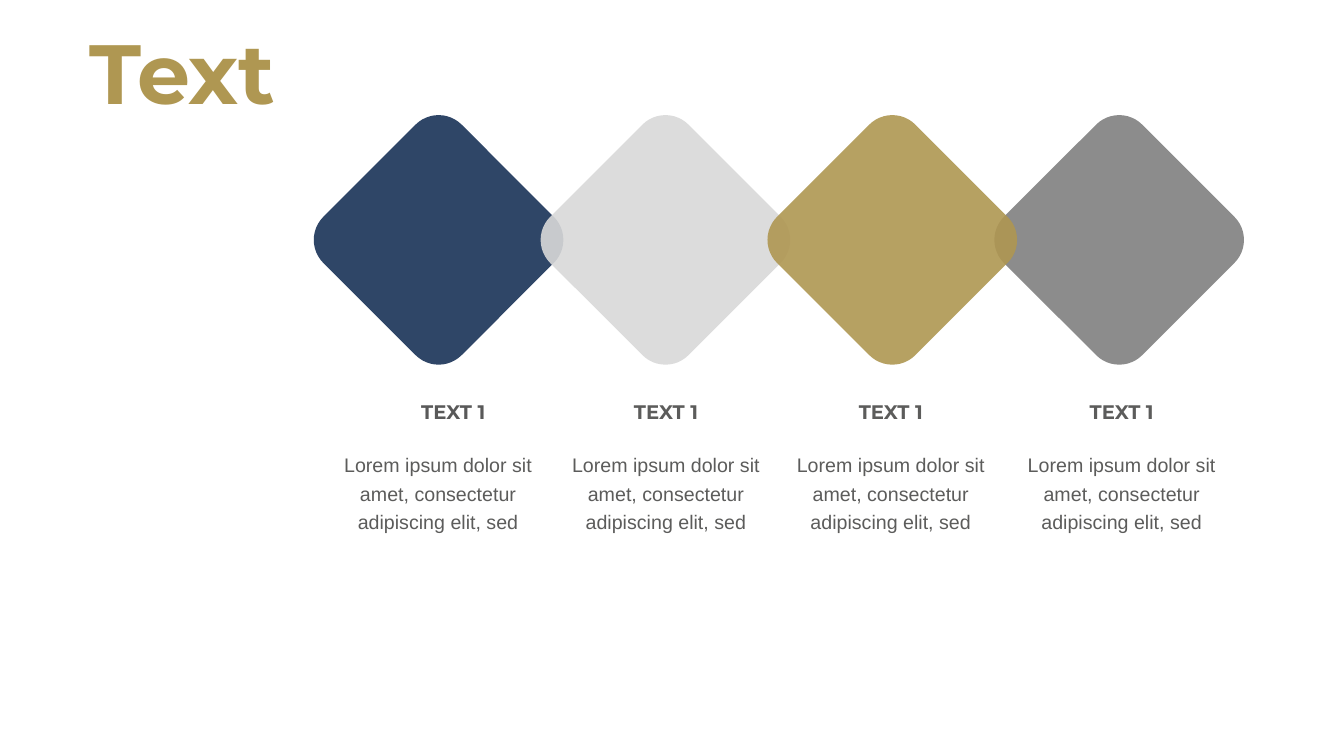
from dataclasses import dataclass

from lxml.etree import SubElement
from pptx import Presentation
from pptx.dml.color import RGBColor
from pptx.enum.shapes import MSO_SHAPE
from pptx.enum.text import MSO_ANCHOR, MSO_AUTO_SIZE, PP_ALIGN
from pptx.oxml.ns import qn
from pptx.shapes.autoshape import Shape
from pptx.slide import Slide
from pptx.util import Inches, Pt

COLOURS = {
    "navy": "193257",
    "silver": "D9D9D9",
    "gold": "AF9752",
    "grey": "808080",
    "first_heading": "595959",
    "text": "5C5C5B",
}
DIAMOND_LEFT, DIAMOND_TOP, DIAMOND_SIZE, DIAMOND_PITCH = 3.38, 1.41, 1.94, 2.25
DIAMOND_ORDER = (0, 1, 3, 2)
HEADING_TOP, BODY_TOP, COLUMN_WIDTH = 3.97, 4.45, 2.05
BODY_TEXT = "Lorem ipsum dolor sit amet, consectetur adipiscing elit, sed"


@dataclass(frozen=True)
class Column:
    """One diamond with its heading and body text."""

    fill: str
    heading_left: float
    body_left: float
    heading_colour: str = "text"


COLUMNS = (
    Column("navy", 3.47, 3.32, "first_heading"),
    Column("silver", 5.58, 5.58),
    Column("gold", 7.81, 7.81),
    Column("grey", 10.1, 10.1),
)


def write_text(shape: Shape, text: str, *, font: str = "Arial", size: float = 14,
               colour: str = "text", bold: bool = False, spacing: float = 1.0,
               alignment: PP_ALIGN = PP_ALIGN.CENTER) -> None:
    """Write one formatted paragraph into a shape."""
    paragraph = shape.text_frame.paragraphs[0]
    paragraph.alignment = alignment
    paragraph.line_spacing = spacing
    run = paragraph.add_run()
    run.text = text
    run.font.name = font
    run.font.size = Pt(size)
    run.font.bold = bold
    run.font.color.rgb = RGBColor.from_string(COLOURS[colour])


def add_title(slide: Slide, text: str) -> None:
    """Place and format the slide title."""
    title = slide.shapes.title
    title.left, title.top = Inches(0.79), Inches(0.43)
    title.width, title.height = Inches(4.44), Inches(1.88)
    frame = title.text_frame
    frame.word_wrap = True
    frame.auto_size = MSO_AUTO_SIZE.NONE
    frame.vertical_anchor = MSO_ANCHOR.TOP
    write_text(title, text, font="Montserrat", size=60, colour="gold", bold=True,
               spacing=0.7, alignment=PP_ALIGN.LEFT)


def add_diamond(slide: Slide, index: int, colour: str) -> None:
    """Draw a translucent rounded square turned onto its corner."""
    diamond = slide.shapes.add_shape(
        MSO_SHAPE.ROUNDED_RECTANGLE, Inches(DIAMOND_LEFT + index * DIAMOND_PITCH),
        Inches(DIAMOND_TOP), Inches(DIAMOND_SIZE), Inches(DIAMOND_SIZE))
    diamond.rotation = 45
    diamond.shadow.inherit = False
    diamond.line.fill.background()
    diamond.fill.solid()
    diamond.fill.fore_color.rgb = RGBColor.from_string(COLOURS[colour])
    fill_colour = diamond.fill._xPr.find(qn("a:solidFill")).find(qn("a:srgbClr"))
    SubElement(fill_colour, qn("a:alpha"), val="90000")


def add_label(slide: Slide, left: float, top: float, height: float) -> Shape:
    """Add a wrapping text box without margins."""
    label = slide.shapes.add_textbox(
        Inches(left), Inches(top), Inches(COLUMN_WIDTH), Inches(height))
    frame = label.text_frame
    frame.word_wrap = True
    frame.auto_size = MSO_AUTO_SIZE.SHAPE_TO_FIT_TEXT
    frame.margin_left = frame.margin_right = 0
    frame.margin_top = frame.margin_bottom = 0
    return label


def add_column_text(slide: Slide, column: Column) -> None:
    """Add the heading and body text below a diamond."""
    heading = add_label(slide, column.heading_left, HEADING_TOP, 0.24)
    write_text(heading, "TEXT 1", font="Montserrat", bold=True,
               colour=column.heading_colour)
    body = add_label(slide, column.body_left, BODY_TOP, 0.82)
    write_text(body, BODY_TEXT, spacing=1.2)


def main() -> None:
    """Build and save the presentation."""
    presentation = Presentation()
    presentation.slide_width = Inches(13.33)
    presentation.slide_height = Inches(7.5)
    slide = presentation.slides.add_slide(presentation.slide_layouts[5])
    add_title(slide, "Text")
    for index in DIAMOND_ORDER:
        add_diamond(slide, index, COLUMNS[index].fill)
    for column in COLUMNS:
        add_column_text(slide, column)
    presentation.save("out.pptx")


if __name__ == "__main__":
    main()
